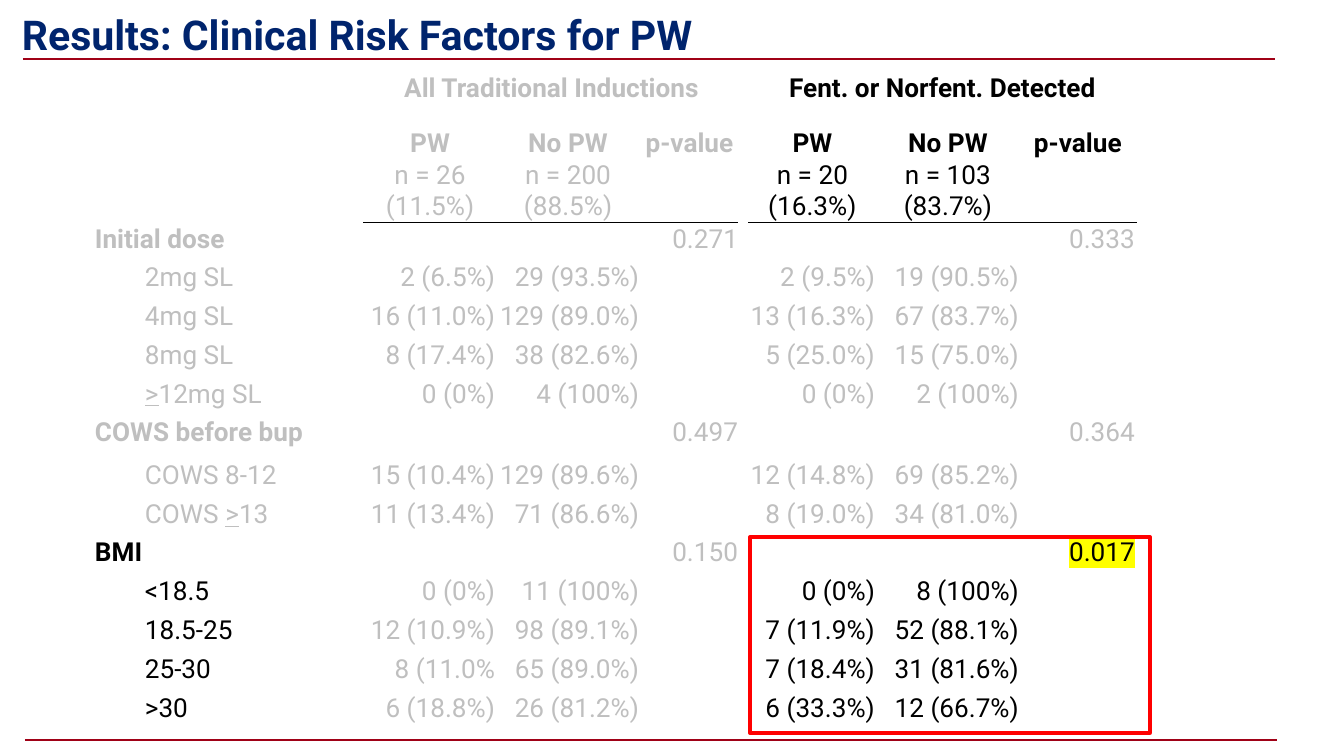
"""Build the slide of clinical risk factors for PW, a results table with one marked block."""
import pptx
import pptx.dml.color
import pptx.enum.shapes
import pptx.enum.text
import pptx.oxml
import pptx.oxml.ns
import pptx.util
from lxml import etree

TITLE = "Results: Clinical Risk Factors for PW"
BANDS = ("All Traditional Inductions", "Fent. or Norfent. Detected")
HEADS = ("PW", "No PW", "p-value")
COUNTS = (("n = 26 (11.5%)", "n = 200 (88.5%)"), ("n = 20 (16.3%)", "n = 103 (83.7%)"))
GROUPS = [
    ("Initial dose", "0.271", "0.333", [
        ("2mg SL", "2 (6.5%)", "29 (93.5%)", "2 (9.5%)", "19 (90.5%)"),
        ("4mg SL", "16 (11.0%)", "129 (89.0%)", "13 (16.3%)", "67 (83.7%)"),
        ("8mg SL", "8 (17.4%)", "38 (82.6%)", "5 (25.0%)", "15 (75.0%)"),
        ("_>_12mg SL", "0 (0%)", "4 (100%)", "0 (0%)", "2 (100%)"),
    ]),
    ("COWS before bup", "0.497", "0.364", [
        ("COWS 8-12", "15 (10.4%)", "129 (89.6%)", "12 (14.8%)", "69 (85.2%)"),
        ("COWS _>_13", "11 (13.4%)", "71 (86.6%)", "8 (19.0%)", "34 (81.0%)"),
    ]),
    ("BMI", "0.150", "0.017", [
        ("<18.5", "0 (0%)", "11 (100%)", "0 (0%)", "8 (100%)"),
        ("18.5-25", "12 (10.9%)", "98 (89.1%)", "7 (11.9%)", "52 (88.1%)"),
        ("25-30", "8 (11.0%", "65 (89.0%)", "7 (18.4%)", "31 (81.6%)"),
        (">30", "6 (18.8%)", "26 (81.2%)", "6 (33.3%)", "12 (66.7%)"),
    ]),
]
FOCUS = "BMI"
COLS = (50, 213, 6, 132, 144, 99, 10, 127, 144, 116)
ROWS = (54, 39, 61, 38, 39, 39, 39, 38, 44, 39, 38, 39, 39, 39, 39, 39)
STARTS = (3, 7)
RULES = ((23, 59), (25, 740))
THEME = {
    "font": "Roboto", "title": 22, "body": 14, "line": 1, "frame": 2,
    "navy": "00246D", "rule": "A00117", "red": "FF0000", "mark": "FFFF00",
    "grey": "BFBFBF", "black": "000000", "white": "FFFFFF",
}
SCALE = 914400 / 134.4
ALIGN = pptx.enum.text.PP_ALIGN
ANCHOR = pptx.enum.text.MSO_ANCHOR


def px(size):
    return pptx.util.Emu(round(size * SCALE))


def rgb(name):
    return pptx.dml.color.RGBColor.from_string(THEME[name])


def style(font, size, color, bold):
    font.name, font.size, font.bold = THEME["font"], pptx.util.Pt(THEME[size]), bold
    font.color.rgb = rgb(color)


def write(cell, text, color, align=ALIGN.LEFT, bold=False):
    para = cell.text_frame.paragraphs[0]
    para.alignment = align
    for i, part in enumerate(text.split("_")):
        if part:
            run = para.add_run()
            run.text = part
            style(run.font, "body", color, bold)
            if i % 2:
                run.font.underline = True


def shade(cell, name):
    props = cell.text_frame.paragraphs[0].runs[0]._r.get_or_add_rPr()
    mark = pptx.oxml.parse_xml(
        f'<a:highlight {pptx.oxml.ns.nsdecls("a")}><a:srgbClr val="{THEME[name]}"/></a:highlight>')
    props.find(pptx.oxml.ns.qn("a:solidFill")).addnext(mark)


def edge(cell, top, bottom):
    props = cell._tc.get_or_add_tcPr()
    sides = (("L", "white"), ("R", "white"), ("T", top), ("B", bottom))
    for i, (side, name) in enumerate(sides):
        props.insert(i, pptx.oxml.parse_xml(
            f'<a:ln{side} {pptx.oxml.ns.nsdecls("a")} w="{pptx.util.Pt(THEME["line"])}">'
            f'<a:solidFill><a:srgbClr val="{THEME[name]}"/></a:solidFill></a:ln{side}>'))


def dress(grid):
    for r in range(len(ROWS)):
        for c in range(len(COLS)):
            cell = grid.cell(r, c)
            cell.fill.solid()
            cell.fill.fore_color.rgb = rgb("white")
            ruled = c in (3, 4, 5, 7, 8, 9)
            edge(cell, "black" if ruled and r == 3 else "white",
                 "black" if ruled and r == 2 else "white")
            cell.margin_left = cell.margin_right = px(1)
            if r:
                cell.margin_top = px(1)
                cell.margin_bottom = 0
            if r == 1:
                cell.vertical_anchor = ANCHOR.BOTTOM
            para = cell.text_frame.paragraphs[0]
            if not para.runs:
                end = etree.SubElement(para._p, pptx.oxml.ns.qn("a:endParaRPr"))
                end.set("sz", str(THEME["body"] * 100))


def head(grid):
    for r in range(3):
        grid.cell(r, 0).merge(grid.cell(r, 1))
    for start, color, band, counts in zip(STARTS, ("grey", "black"), BANDS, COUNTS):
        grid.cell(0, start).merge(grid.cell(0, start + 2))
        write(grid.cell(0, start), band, color, ALIGN.CENTER, True)
        for r, texts in ((1, HEADS), (2, counts)):
            for c, text in enumerate(texts, start):
                write(grid.cell(r, c), text, color, ALIGN.CENTER, r == 1)


def body(grid):
    r = 3
    for name, left, right, items in GROUPS:
        tint = "black" if name == FOCUS else "grey"
        grid.cell(r, 0).merge(grid.cell(r, 2))
        write(grid.cell(r, 0), name, tint, bold=True)
        write(grid.cell(r, 5), left, "grey", ALIGN.RIGHT)
        write(grid.cell(r, 9), right, tint, ALIGN.RIGHT)
        if name == FOCUS:
            shade(grid.cell(r, 9), "mark")
        for r, (label, *values) in enumerate(items, r + 1):
            grid.cell(r, 1).merge(grid.cell(r, 2))
            write(grid.cell(r, 1), label, tint)
            for c, text in zip((3, 4, 7, 8), values):
                write(grid.cell(r, c), text, "grey" if c < 7 else tint, ALIGN.RIGHT)
        r += 1


def main():
    deck = pptx.Presentation()
    deck.slide_width, deck.slide_height = px(1344), px(756)
    shapes = deck.slides.add_slide(deck.slide_layouts[6]).shapes

    title = shapes.add_textbox(px(9), px(12), px(995), px(44)).text_frame
    title.word_wrap = True
    title.vertical_anchor = ANCHOR.MIDDLE
    title.margin_left = title.margin_right = title.margin_top = title.margin_bottom = px(13)
    title.text = TITLE
    style(title.paragraphs[0].runs[0].font, "title", "navy", True)

    grid = shapes.add_table(len(ROWS), len(COLS), px(94), px(66),
                            px(sum(COLS)), px(sum(ROWS))).table
    grid.first_row = grid.horz_banding = False
    for col, size in zip(grid.columns, COLS):
        col.width = px(size)
    for row, size in zip(grid.rows, ROWS):
        row.height = px(size)
    head(grid)
    body(grid)
    dress(grid)

    for x, y in RULES:
        rule = shapes.add_connector(pptx.enum.shapes.MSO_CONNECTOR.STRAIGHT,
                                    px(x), px(y), px(x + 1252), px(y))
        rule.line.color.rgb = rgb("rule")
        rule.line.width = pptx.util.Pt(THEME["line"])
        etree.SubElement(rule._element.spPr, pptx.oxml.ns.qn("a:effectLst"))

    frame = shapes.add_shape(pptx.enum.shapes.MSO_SHAPE.RECTANGLE,
                             px(750), px(537), px(400), px(196))
    frame.shadow.inherit = False
    frame.fill.background()
    frame.line.color.rgb = rgb("red")
    frame.line.width = pptx.util.Pt(THEME["frame"])
    deck.save("out.pptx")


if __name__ == "__main__":
    main()
